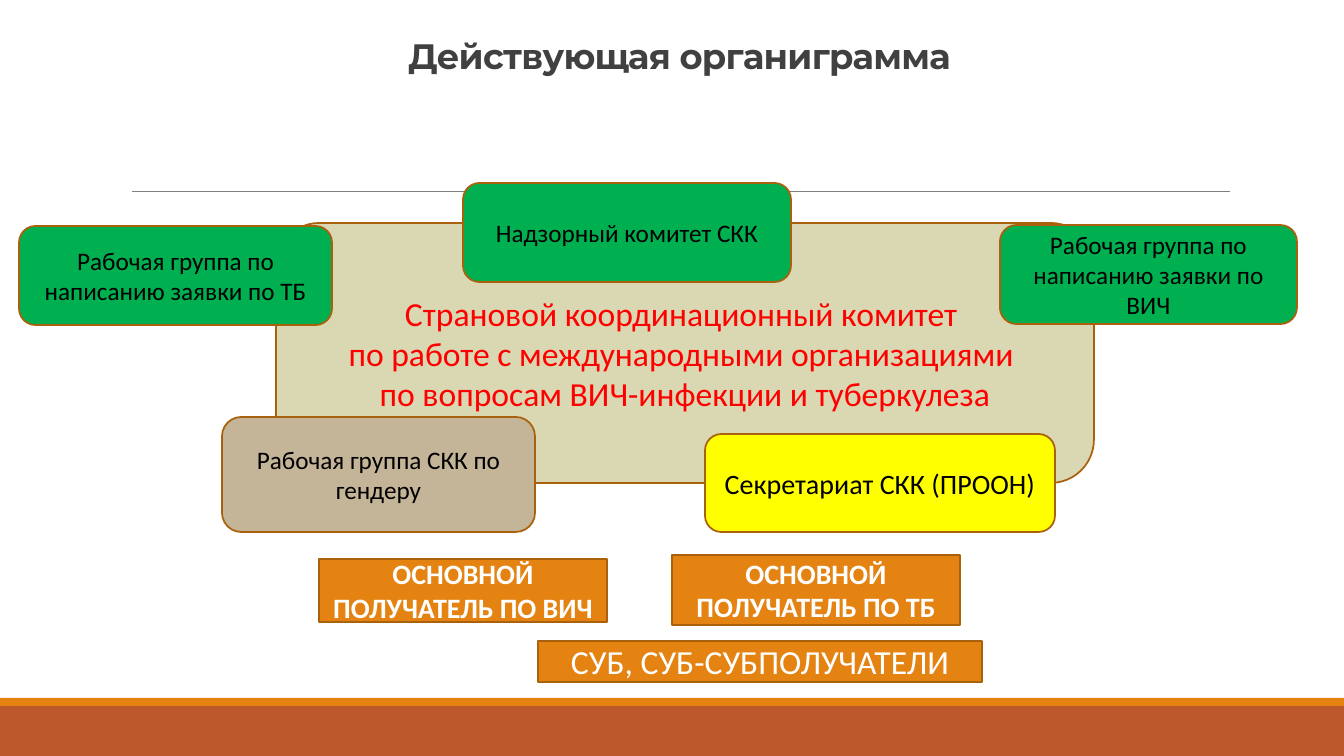
import pptx
import pptx.util
import pptx.dml.color
import pptx.enum.shapes
import pptx.enum.text
import pptx.oxml.ns

PX = 914400 / 100.8
WIDE, HIGH = 1344, 756
KIND = pptx.enum.shapes.MSO_SHAPE
ANCHOR = pptx.enum.text.MSO_ANCHOR
EDGE, ORANGE, GREEN = "A9610D", "E48312", "00B050"
BLACK, WHITE, RED = "000000", "FFFFFF", "FF0000"

# place, fill, text, size, ink
ROUNDS = [
    ((276, 223, 818, 260), "DAD7B3",
     "Страновой координационный комитет \n"
     "по работе с международными организациями \n"
     "по вопросам ВИЧ-инфекции и туберкулеза", 24, RED),
    ((1000, 225, 297, 99), GREEN,
     "Рабочая группа по написанию заявки по ВИЧ", 18, BLACK),
    ((463, 183, 328, 99), GREEN, "Надзорный комитет СКК", 18, BLACK),
    ((222, 417, 313, 115), "C5B598",
     "Рабочая группа СКК по гендеру", 18, BLACK),
    ((705, 434, 350, 98), "FFFF00", "Секретариат СКК (ПРООН)", 20, BLACK),
    ((19, 226, 313, 99), GREEN,
     "Рабочая группа по написанию заявки по ТБ", 18, BLACK),
]
# place, text, size, bold
BARS = [
    ((319, 559, 288, 63), "ОСНОВНОЙ ПОЛУЧАТЕЛЬ ПО ВИЧ", 20, True),
    ((672, 555, 288, 70), "ОСНОВНОЙ ПОЛУЧАТЕЛЬ ПО ТБ", 20, True),
    ((538, 641, 444, 41), "СУБ, СУБ-СУБПОЛУЧАТЕЛИ", 24, False),
]


def emu(*sizes):
    return [round(size * PX) for size in sizes]


def color(code):
    return pptx.dml.color.RGBColor.from_string(code)


def write(shape, text, size, ink, bold=False, face="Calibri",
          anchor=ANCHOR.MIDDLE):
    """Fill a shape with centred paragraphs, one per line of text."""
    frame = shape.text_frame
    frame.word_wrap = True
    frame.vertical_anchor = anchor
    frame.text = text
    for para in frame.paragraphs:
        para.alignment = pptx.enum.text.PP_ALIGN.CENTER
        font = para.font
        font.name, font.size, font.bold = face, pptx.util.Pt(size), bold
        font.color.rgb = color(ink)


def add_box(slide, kind, place, fill, edge=None):
    box = slide.shapes.add_shape(kind, *emu(*place))
    box.shadow.inherit = False
    box.fill.solid()
    box.fill.fore_color.rgb = color(fill)
    if edge:
        box.line.color.rgb = color(edge)
        box.line.width = pptx.util.Pt(1.25)
    else:
        box.line.fill.background()
    return box


def add_rule(slide, start, end, top):
    rule = slide.shapes.add_connector(
        pptx.enum.shapes.MSO_CONNECTOR.STRAIGHT, *emu(start, top, end, top))
    rule.line.color.rgb = color("808080")
    rule.line.width = pptx.util.Pt(0.5)
    props = rule._element.spPr
    props.append(pptx.oxml.parse_xml(
        "<a:effectLst %s/>" % pptx.oxml.ns.nsdecls("a")))


def add_title(slide, place, text):
    title = slide.shapes.add_textbox(*emu(*place))
    write(title, text, 25.2, "404040", True, "Montserrat", ANCHOR.BOTTOM)
    para = title.text_frame.paragraphs[0]
    para.line_spacing = 0.85
    props = para._p.get_or_add_pPr()
    props.find(pptx.oxml.ns.qn("a:defRPr")).set("spc", "-50")


def main():
    deck = pptx.Presentation()
    deck.slide_width, deck.slide_height = emu(WIDE, HIGH)
    slide = deck.slides.add_slide(deck.slide_layouts[6])

    add_box(slide, KIND.RECTANGLE, (0, 706, WIDE, 50), "BD582C")
    add_box(slide, KIND.RECTANGLE, (0, 698, WIDE, 8), ORANGE)
    add_rule(slide, 132, 1230, 191)
    add_title(slide, (160, 40, 1039, 42), "Действующая органиграмма")

    for place, fill, text, size, ink in ROUNDS:
        box = add_box(slide, KIND.ROUNDED_RECTANGLE, place, fill, EDGE)
        write(box, text, size, ink)
    for place, text, size, bold in BARS:
        box = add_box(slide, KIND.RECTANGLE, place, ORANGE, EDGE)
        write(box, text, size, WHITE, bold)

    deck.save("out.pptx")


if __name__ == "__main__":
    main()
